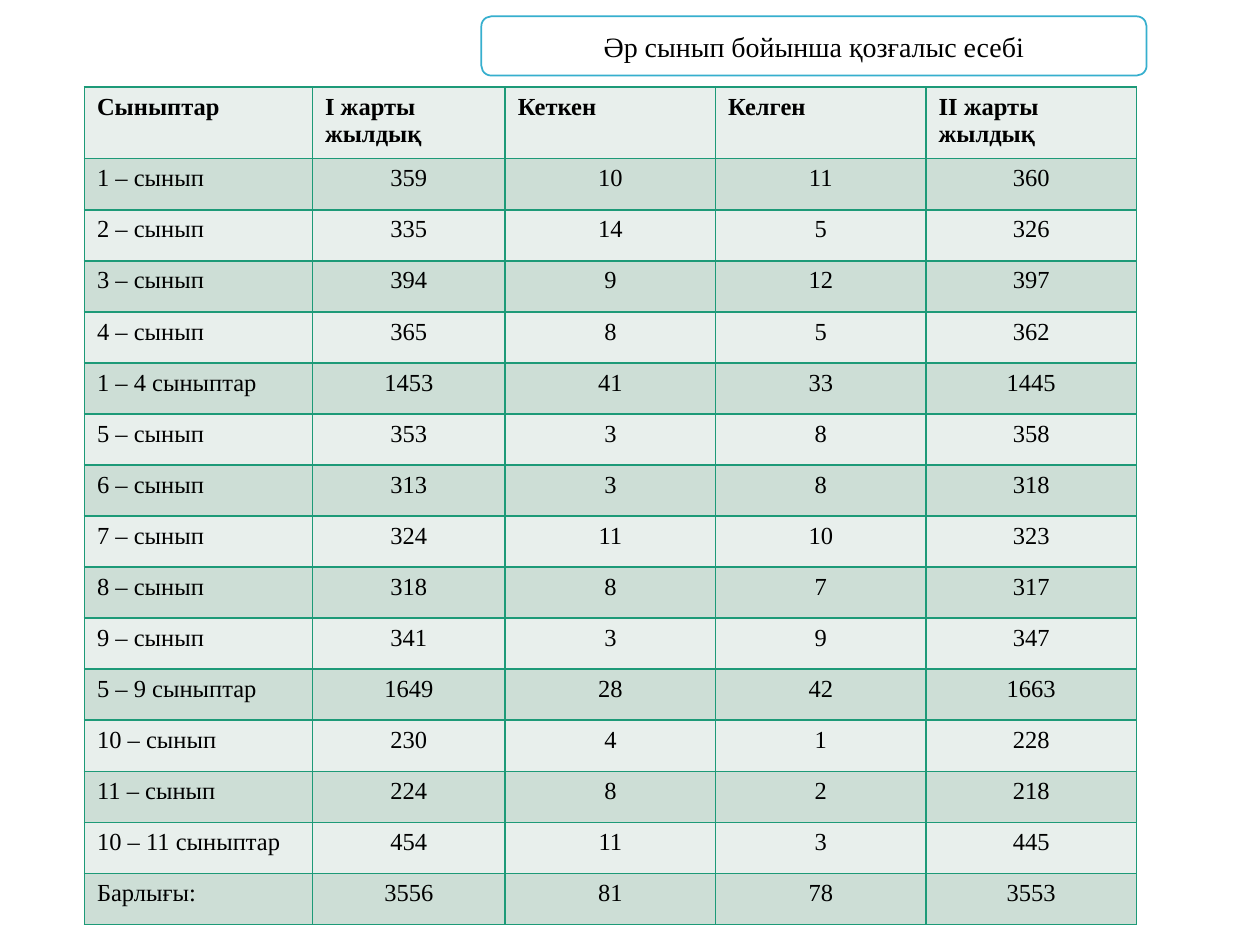
from typing import Any, NamedTuple

from lxml.etree import SubElement
from pptx import Presentation
from pptx.dml.color import RGBColor
from pptx.enum.shapes import MSO_SHAPE as Shape
from pptx.enum.text import MSO_ANCHOR as Anchor, PP_ALIGN as Align
from pptx.oxml.ns import qn
from pptx.util import Inches, Pt

FONT = "Times New Roman"
BLACK, WHITE = "000000", "FFFFFF"
TABLE_LINE, TITLE_LINE = "1D9A78", "36AFCE"
BANDS = ("E8EFEC", "CDDED6")

TITLE = "Әр сынып бойынша қозғалыс есебі"
HEADERS = ("Сыныптар", "І жарты жылдық", "Кеткен", "Келген", "ІІ жарты жылдық")
COLUMN_WIDTHS = (1.81, 1.53, 1.67, 1.67, 1.67)
HEADER_HEIGHT, TABLE_HEIGHT = 0.57, 6.65


class ClassMovement(NamedTuple):
    name: str
    first_half: int
    left: int
    arrived: int
    second_half: int


MOVEMENTS = (
    ClassMovement("1 – сынып", 359, 10, 11, 360),
    ClassMovement("2 – сынып", 335, 14, 5, 326),
    ClassMovement("3 – сынып", 394, 9, 12, 397),
    ClassMovement("4 – сынып", 365, 8, 5, 362),
    ClassMovement("1 – 4 сыныптар", 1453, 41, 33, 1445),
    ClassMovement("5 – сынып", 353, 3, 8, 358),
    ClassMovement("6 – сынып", 313, 3, 8, 318),
    ClassMovement("7 – сынып", 324, 11, 10, 323),
    ClassMovement("8 – сынып", 318, 8, 7, 317),
    ClassMovement("9 – сынып", 341, 3, 9, 347),
    ClassMovement("5 – 9 сыныптар", 1649, 28, 42, 1663),
    ClassMovement("10 – сынып", 230, 4, 1, 228),
    ClassMovement("11 – сынып", 224, 8, 2, 218),
    ClassMovement("10 – 11 сыныптар", 454, 11, 3, 445),
    ClassMovement("Барлығы:", 3556, 81, 78, 3553),
)


def set_color(color_format: Any, color: str) -> None:
    color_format.rgb = RGBColor.from_string(color)


def set_fill(item: Any, color: str) -> None:
    item.fill.solid()
    set_color(item.fill.fore_color, color)


def write_text(frame: Any, text: str, size: int, bold: bool, align: Align) -> None:
    paragraph = frame.paragraphs[0]
    paragraph.alignment = align
    run = paragraph.add_run()
    run.text = text
    font_values = {"name": FONT, "size": Pt(size), "bold": bold}
    for name, value in font_values.items():
        setattr(run.font, name, value)
    set_color(run.font.color, BLACK)


def add_borders(cell: Any, color: str, width: int) -> None:
    properties = cell._tc.get_or_add_tcPr()
    for side in ("a:lnL", "a:lnR", "a:lnT", "a:lnB"):
        line = SubElement(properties, qn(side), w=str(Pt(width)))
        fill = SubElement(line, qn("a:solidFill"))
        SubElement(fill, qn("a:srgbClr"), val=color)


def add_movement_table(slide: Any) -> None:
    rows = (HEADERS, *MOVEMENTS)
    table = slide.shapes.add_table(
        len(rows), len(HEADERS), Inches(0.67), Inches(0.69),
        Inches(sum(COLUMN_WIDTHS)), Inches(TABLE_HEIGHT),
    ).table
    for column, width in zip(table.columns, COLUMN_WIDTHS):
        column.width = Inches(width)
    body_height = Inches((TABLE_HEIGHT - HEADER_HEIGHT) / len(MOVEMENTS))

    for row_index, values in enumerate(rows):
        is_header = row_index == 0
        table.rows[row_index].height = Inches(HEADER_HEIGHT) if is_header else body_height
        for column_index, value in enumerate(values):
            cell = table.cell(row_index, column_index)
            add_borders(cell, TABLE_LINE, 1)
            set_fill(cell, BANDS[row_index % 2])
            align = Align.LEFT if is_header or column_index == 0 else Align.CENTER
            write_text(cell.text_frame, str(value), 14, is_header, align)


def add_title(slide: Any) -> None:
    shape = slide.shapes.add_shape(
        Shape.ROUNDED_RECTANGLE, Inches(3.82), Inches(0.13), Inches(5.28), Inches(0.47)
    )
    shape.shadow.inherit = False
    set_fill(shape, WHITE)
    set_color(shape.line.color, TITLE_LINE)
    shape.line.width = Pt(1)
    frame_values = {"word_wrap": True, "vertical_anchor": Anchor.MIDDLE}
    for name, value in frame_values.items():
        setattr(shape.text_frame, name, value)
    write_text(shape.text_frame, TITLE, 16, False, Align.CENTER)


def main() -> None:
    presentation = Presentation()
    presentation.slide_width, presentation.slide_height = Inches(10), Inches(7.5)
    slide = presentation.slides.add_slide(presentation.slide_layouts[6])

    # Table of pupils by class
    add_movement_table(slide)
    # Title above the table
    add_title(slide)

    presentation.save("out.pptx")


if __name__ == "__main__":
    main()
